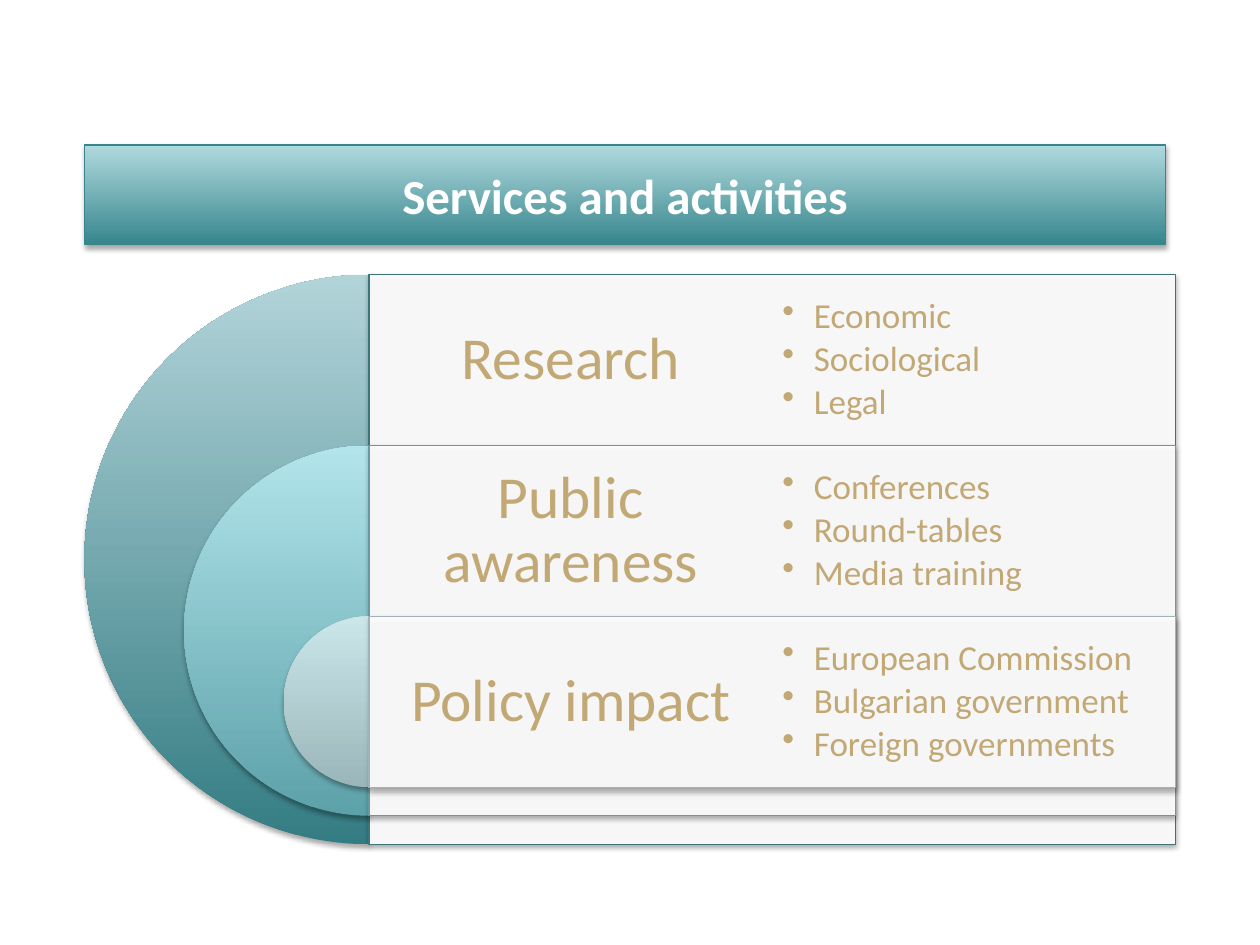
from lxml import etree
from pptx import Presentation
from pptx.dml.color import RGBColor
from pptx.enum.shapes import MSO_SHAPE
from pptx.enum.text import MSO_ANCHOR, PP_ALIGN
from pptx.oxml import parse_xml
from pptx.oxml.ns import nsdecls, qn
from pptx.util import Inches, Pt

WHITE = RGBColor(0xFF, 0xFF, 0xFF)
GOLD = RGBColor(0xC2, 0xA8, 0x74)
BAR_DARK = RGBColor(0x37, 0x86, 0x8D)
BAR_LIGHT = RGBColor(0xB0, 0xDA, 0xDE)

# Heading, bullets, pie gradient (bottom, top), panel outline
ROWS = [
    ("Research", ["Economic", "Sociological", "Legal"],
     RGBColor(0x34, 0x7C, 0x83), RGBColor(0xB2, 0xD4, 0xD9), RGBColor(0x3D, 0x74, 0x7A)),
    ("Public awareness", ["Conferences", "Round-tables", "Media training"],
     RGBColor(0x5D, 0xA1, 0xA9), RGBColor(0xB2, 0xE4, 0xEB), RGBColor(0x66, 0x9A, 0xA0)),
    ("Policy impact", ["European Commission", "Bulgarian government", "Foreign governments"],
     RGBColor(0x9B, 0xB6, 0xBA), RGBColor(0xCB, 0xE6, 0xE9), RGBColor(0x9F, 0xB4, 0xB6)),
]


def style(s, bottom, top=None, line=None):
    """Fill (vertical gradient, or translucent solid), outline and soft shadow."""
    if top is not None:
        s.fill.gradient()
        s.fill.gradient_angle = 90
        for stop, color in zip(s.fill.gradient_stops, (bottom, top)):
            stop.color.rgb = color
    else:
        s.fill.solid()
        s.fill.fore_color.rgb = bottom
        clr = s.fill._xPr.find(qn("a:solidFill"))[0]
        etree.SubElement(clr, qn("a:alpha")).set("val", "90000")
    if line is not None:
        s.line.color.rgb = line
        s.line.width = Pt(0.75)
    else:
        s.line.fill.background()
    s.shadow.inherit = False
    s._element.spPr.find(qn("a:effectLst")).append(parse_xml(
        f'<a:outerShdw {nsdecls("a")} blurRad="{Pt(3.1)}" dist="{Pt(1.8)}" dir="5400000" '
        'rotWithShape="0"><a:srgbClr val="000000"><a:alpha val="35000"/></a:srgbClr>'
        '</a:outerShdw>'))


def add_text(left, top, inset, lines, size, bullets=False):
    """Text box filling one half of a row."""
    tf = slide.shapes.add_textbox(Inches(left), Inches(top), Inches(HALF), Inches(ROW)).text_frame
    tf.word_wrap = True
    tf.vertical_anchor = MSO_ANCHOR.MIDDLE
    for side in ("left", "top", "right", "bottom"):
        setattr(tf, f"margin_{side}", Inches(inset))
    for i, text in enumerate(lines):
        p = tf.paragraphs[0] if i == 0 else tf.add_paragraph()
        p.line_spacing = 0.9
        if bullets:
            p.space_after = Pt(3)
            pPr = p._p.get_or_add_pPr()
            pPr.set("marL", str(Inches(0.25)))
            pPr.set("indent", str(-Inches(0.25)))
            etree.SubElement(pPr, qn("a:buChar")).set("char", "•")
        else:
            p.alignment = PP_ALIGN.CENTER
        r = p.add_run()
        r.text = text
        r.font.name = "Calibri"
        r.font.size = Pt(size)
        r.font.color.rgb = GOLD


prs = Presentation()
prs.slide_width, prs.slide_height = Inches(10), Inches(7.5)
slide = prs.slides.add_slide(prs.slide_layouts[5])

# Title bar
title = slide.shapes.title
title.left, title.top, title.width, title.height = (Inches(v) for v in (0.67, 1.15, 8.58, 0.79))
style(title, BAR_DARK, BAR_LIGHT, BAR_DARK)
title.text_frame.vertical_anchor = MSO_ANCHOR.MIDDLE
p = title.text_frame.paragraphs[0]
p.alignment = PP_ALIGN.CENTER
r = p.add_run()
r.text = "Services and activities"
for name, value in {"name": "Calibri", "size": Pt(28), "bold": True}.items():
    setattr(r.font, name, value)
r.font.color.rgb = WHITE

# Nested half circles, each with its panel, heading and bullets
AXIS, TOP, SIZE, HALF = 2.93, 2.18, 4.52, 3.2
ROW = 0.3 * SIZE
for i, (heading, items, dark, light, outline) in enumerate(ROWS):
    top = TOP + i * ROW
    size = SIZE * (1 - 0.35 * i)
    pie = slide.shapes.add_shape(MSO_SHAPE.PIE, Inches(AXIS - size / 2), Inches(top),
                                 Inches(size), Inches(size))
    pie.adjustments[0], pie.adjustments[1] = 54, 162
    style(pie, dark, light)
    panel = slide.shapes.add_shape(MSO_SHAPE.RECTANGLE, Inches(AXIS), Inches(top),
                                   Inches(2 * HALF), Inches(size))
    style(panel, WHITE, line=outline)
    add_text(AXIS, top, 0.14, [heading], 34)
    add_text(AXIS + HALF, top, 0.08, items, 20, bullets=True)

prs.save("out.pptx")
